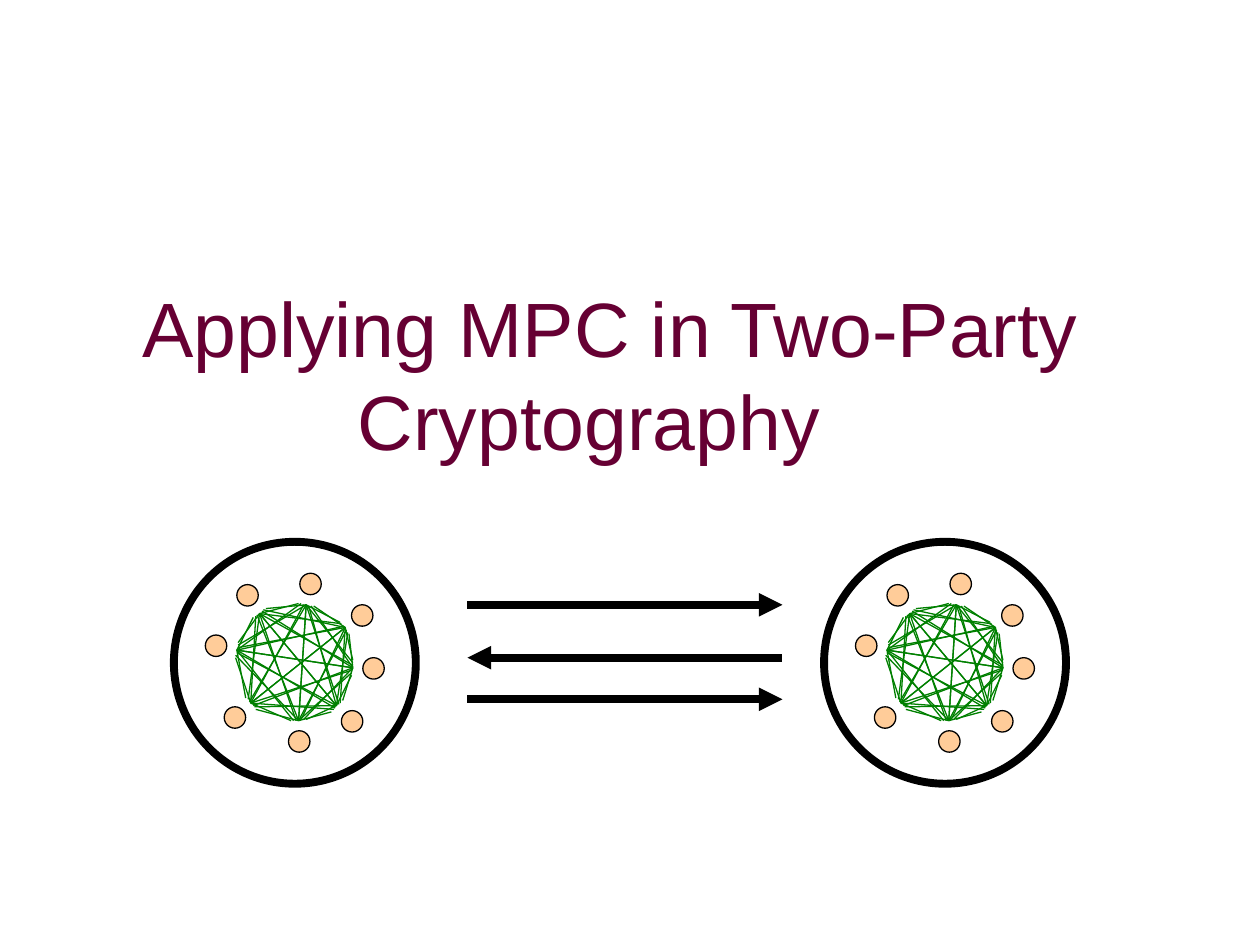
from math import hypot

from lxml.etree import SubElement
from pptx import Presentation
from pptx.dml.color import RGBColor
from pptx.enum.shapes import MSO_CONNECTOR, MSO_SHAPE
from pptx.enum.text import MSO_ANCHOR, PP_ALIGN
from pptx.oxml.ns import qn
from pptx.util import Pt

PX = 9144  # 100 px to the inch
COLORS = {"title": "660033", "ring": "FFFFFF", "line": "000000",
          "dot": "FFCC99", "web": "008000"}
THIN, THICK = 0.75, 4.5

# The two parties
RING_TOP, RING = 430, 192
PARTIES = [138, 654]  # left edges

# Players, as offsets inside the ring, clockwise from the upper left
DOT = 17
DOTS = [(50, 34), (100, 25), (141, 50), (150, 92),
        (133, 134), (91, 150), (40, 131), (25, 74)]

# The web of channels between the players
HUB = (96, 97)  # its middle, inside the ring
GAP = 17  # from the middle of a player to its port
STEP = 2  # between neighbouring lines that leave one port

# Messages: y and the end that carries the arrowhead
ARROW_X = (371, 621)
ARROWS = [(480, "tailEnd"), (522, "headEnd"), (555, "tailEnd")]


def paint(color):
    return RGBColor.from_string(COLORS[color])


def put(obj, style):
    for name, value in style.items():
        setattr(obj, name, value)


def add_title(slide, text, left, top, width, height):
    box = slide.shapes.add_textbox(left * PX, top * PX, width * PX, height * PX)
    frame = box.text_frame
    put(frame, {"word_wrap": True, "vertical_anchor": MSO_ANCHOR.TOP})
    para = frame.paragraphs[0]
    put(para, {"alignment": PP_ALIGN.CENTER, "space_before": Pt(9)})
    run = para.add_run()
    run.text = text
    put(run.font, {"name": "Arial", "size": Pt(44)})
    run.font.color.rgb = paint("title")


def add_disc(shapes, left, top, size, fill, weight):
    disc = shapes.add_shape(MSO_SHAPE.OVAL, left * PX, top * PX,
                            size * PX, size * PX)
    disc.shadow.inherit = False
    disc.fill.solid()
    disc.fill.fore_color.rgb = paint(fill)
    disc.line.color.rgb = paint("line")
    disc.line.width = Pt(weight)


def add_line(shapes, start, end, color, weight, head=None):
    points = [value * PX for value in (*start, *end)]
    line = shapes.add_connector(MSO_CONNECTOR.STRAIGHT, *points)
    line.line.color.rgb = paint(color)
    line.line.width = Pt(weight)
    if head:
        SubElement(line.line._get_or_add_ln(), qn("a:" + head), type="triangle")
    SubElement(line._element.spPr, qn("a:effectLst"))


def port(dot, slide_by=0):
    """Point GAP px from a player towards the hub, moved clockwise."""
    x, y = (value + DOT / 2 for value in dot)
    dx, dy = x - HUB[0], y - HUB[1]
    dist = hypot(dx, dy)
    ux, uy = dx / dist, dy / dist  # unit vector from hub to player
    return (round(x - GAP * ux - slide_by * uy),
            round(y - GAP * uy + slide_by * ux))


def add_web(shapes, left, top):
    """Send a fan of lines from each player to all the others."""
    count = len(DOTS)
    for i, dot in enumerate(DOTS):
        for k in range(1, count):
            # The next player clockwise gets the most clockwise line
            x1, y1 = port(dot, STEP * (count // 2 - k))
            x2, y2 = port(DOTS[(i + k) % count])
            add_line(shapes, (left + x1, top + y1), (left + x2, top + y2),
                     "web", THIN)


def add_party(slide, left, top):
    add_disc(slide.shapes, left, top, RING, "ring", THICK)
    group = slide.shapes.add_group_shape().shapes
    for x, y in DOTS:
        add_disc(group, left + x, top + y, DOT, "dot", THIN)
    add_web(group, left, top)


def main():
    deck = Presentation()
    put(deck, {"slide_width": 1000 * PX, "slide_height": 750 * PX})
    slide = deck.slides.add_slide(deck.slide_layouts[6])

    # Title
    add_title(slide, "Applying MPC in Two-Party Cryptography  ",
              20, 218, 929, 189)

    # Parties with their players
    for left in PARTIES:
        add_party(slide, left, RING_TOP)

    # Messages between the parties
    x1, x2 = ARROW_X
    for y, head in ARROWS:
        add_line(slide.shapes, (x1, y), (x2, y), "line", THICK, head)

    deck.save("out.pptx")


if __name__ == "__main__":
    main()
